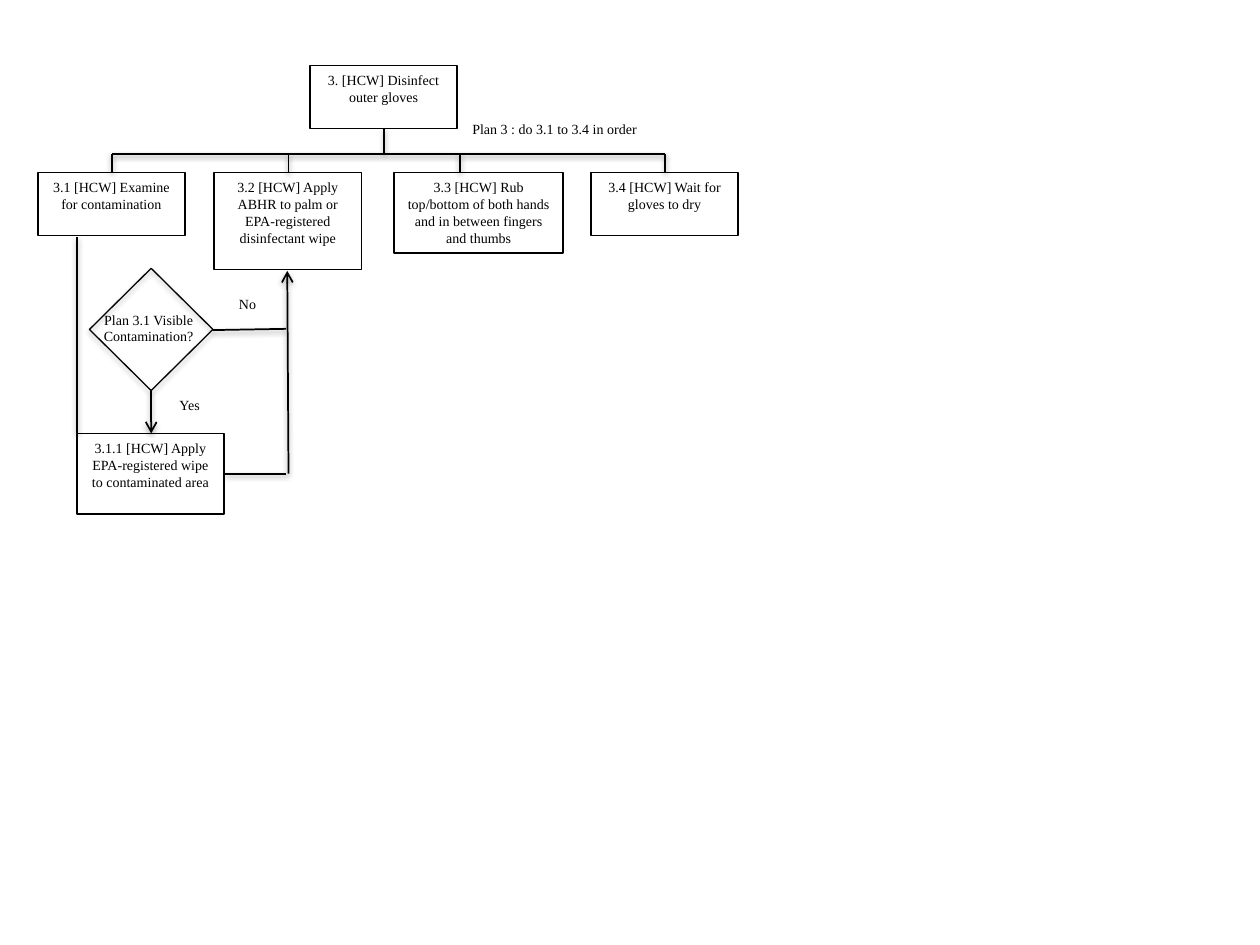
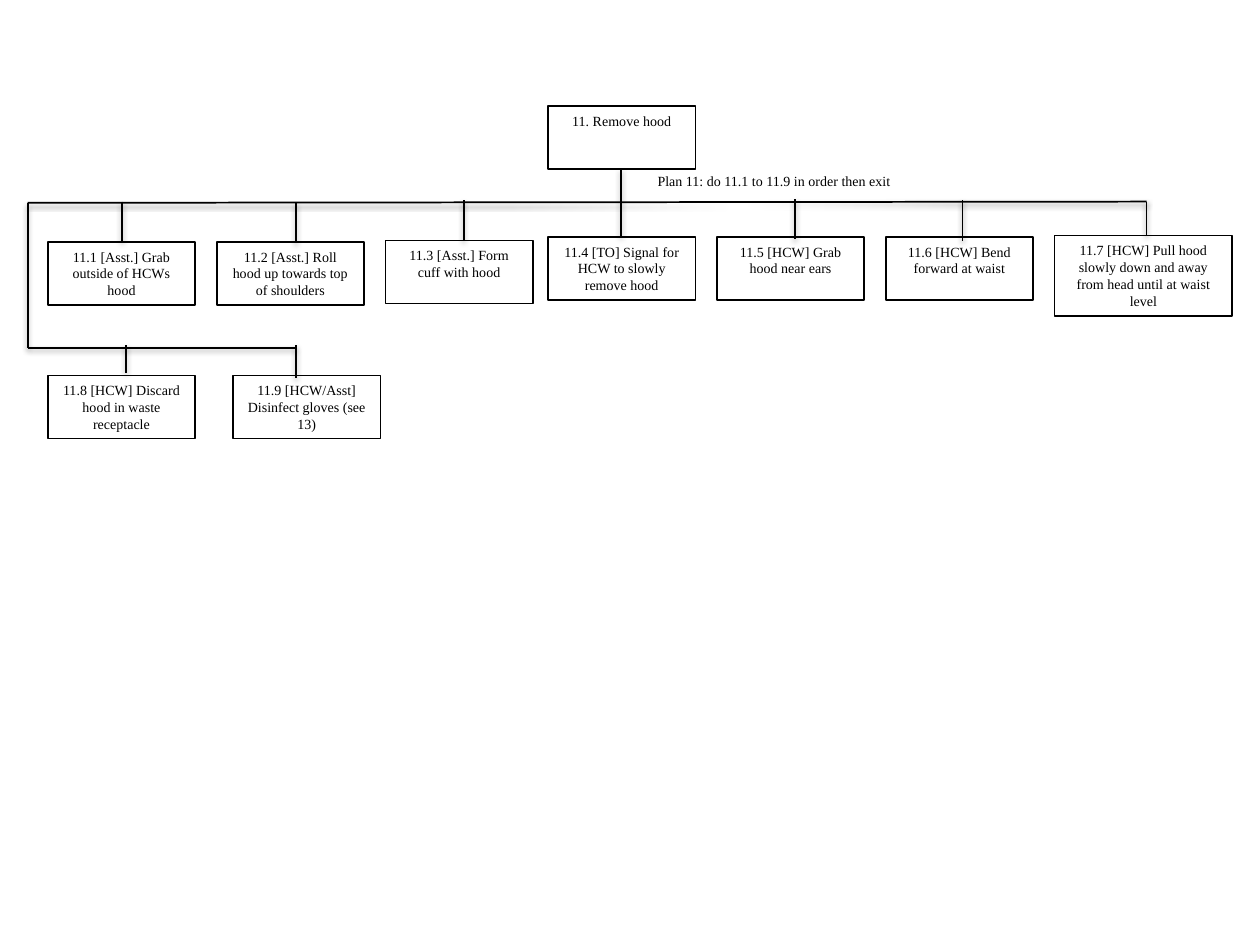
"""Build two task-analysis charts: disinfecting outer gloves and removing a hood."""
from dataclasses import dataclass
from lxml.etree import SubElement
from pptx import Presentation
from pptx.dml.color import RGBColor
from pptx.enum.shapes import MSO_CONNECTOR as Connector, MSO_SHAPE as Shape
from pptx.enum.text import MSO_ANCHOR as Anchor, PP_ALIGN as Align
from pptx.oxml.ns import qn
from pptx.util import Inches, Pt


@dataclass(frozen=True)
class Theme:
    font: str = "Times New Roman"
    text_size: float = 8
    ink: RGBColor = RGBColor(0, 0, 0)
    paper: RGBColor = RGBColor(255, 255, 255)
    line_width: float = 1
    diamond_width: float = 0.75
    shadow_blur: float = 3.1
    line_shadow: tuple = (1.6, 38)
    diamond_shadow: tuple = (1.8, 35)


THEME = Theme()
SLIDE_WIDTH, SLIDE_HEIGHT = 10, 7.5
BOX_WIDTH, BOX_HEIGHT, TALL_HEIGHT = 1.17, 0.5, 0.64
LABEL_HEIGHT, PLAN_WIDTH = 0.24, 2.52

GLOVES_ROW, GLOVES_RAIL = 1.37, 1.22
HOOD_PITCH, HOOD_RAIL, HOOD_LOWER_RAIL = 1.34, 1.6, 2.76
HOOD_LEFT, HOOD_MIDDLE, HOOD_MARGIN = 0.38, 4.35, 0.22

GLOVES = {
    "boxes": [
        ("3. [HCW] Disinfect outer gloves", 2.46, 0.52),
        ("3.1 [HCW] Examine for contamination", 0.3, GLOVES_ROW),
        ("3.2 [HCW] Apply ABHR to palm or EPA-registered disinfectant wipe",
         1.7, GLOVES_ROW, BOX_WIDTH, 0.77),
        ("3.3 [HCW] Rub top/bottom of both hands and in between fingers and thumbs",
         3.13, GLOVES_ROW, 1.34, TALL_HEIGHT),
        ("3.4 [HCW] Wait for gloves to dry", 4.69, GLOVES_ROW),
    ],
    "lines": [
        ((0.89, GLOVES_RAIL), (5.28, GLOVES_RAIL)),
        ((3.05, 1.02), (3.05, GLOVES_RAIL)),
        *[((x, GLOVES_RAIL), (x, GLOVES_ROW)) for x in (0.89, 2.29, 3.65, 5.28)],
        ((0.61, 1.88), (0.61, 3.44)),
    ],
    "plan": ("Plan 3 : do 3.1 to 3.4 in order", 3.65, 0.91),
}

DECISION = {
    "diamond": (0.71, 2.13, 0.98, 0.97),
    "boxes": [("3.1.1 [HCW] Apply EPA-registered wipe to contaminated area",
               0.61, 3.44, BOX_WIDTH, TALL_HEIGHT)],
    "labels": [
        ("Plan 3.1 Visible Contamination?", 0.69, 2.42, 0.98, 0.37),
        ("Yes", 1.32, 3.1, 0.37, 0.37),
        ("No", 1.78, 2.3, 0.37, LABEL_HEIGHT),
    ],
    "lines": [
        ((1.78, 3.76), (2.27, 3.76)),
        ((1.69, 2.62), (2.27, 2.61)),
    ],
    "arrows": [
        ((1.2, 3.1), (1.2, 3.44)),
        ((2.29, 3.76), (2.28, 2.15)),
    ],
}

HOOD_STEPS = [
    ("11.1 [Asst.] Grab outside of HCWs hood", HOOD_LEFT, 0, 1.92),
    ("11.2 [Asst.] Roll hood up towards top of shoulders", HOOD_LEFT, 1, 1.92),
    ("11.3 [Asst.] Form cuff with hood", HOOD_LEFT, 2, 1.91),
    ("11.4 [TO] Signal for HCW to slowly remove hood", HOOD_MIDDLE, 0, 1.88),
    ("11.5 [HCW] Grab hood near ears", HOOD_MIDDLE, 1, 1.88),
    ("11.6 [HCW] Bend forward at waist", HOOD_MIDDLE, 2, 1.88),
]
HOOD_STEMS = [
    (0.97, 1.6, 1.92), (2.35, 1.61, 1.93), (3.68, 1.59, 1.91), (4.93, 1.34, 1.88),
    (6.31, 1.58, 1.9), (7.64, 1.59, 1.91), (9.1, HOOD_RAIL, 1.87),
    (1, 2.74, 2.96), (2.35, 2.74, 3),
]
HOOD = {
    "boxes": [
        ("11. Remove hood", HOOD_MIDDLE, 0.84),
        *[(text, start + column * HOOD_PITCH, top)
          for text, start, column, top in HOOD_STEPS],
        ("11.7 [HCW] Pull hood slowly down and away from head until at waist level",
         HOOD_MIDDLE + 3 * HOOD_PITCH, 1.87, 1.41, TALL_HEIGHT),
        ("11.8 [HCW] Discard hood in waste receptacle", HOOD_LEFT, 2.98),
        ("11.9 [HCW/Asst] Disinfect gloves (see 13)", 1.85, 2.98),
    ],
    "lines": [
        ((9.1, HOOD_RAIL), (HOOD_MARGIN, 1.61)),
        ((HOOD_MARGIN, 1.61), (HOOD_MARGIN, HOOD_LOWER_RAIL)),
        ((2.35, HOOD_LOWER_RAIL), (HOOD_MARGIN, HOOD_LOWER_RAIL)),
        *[((x, top), (x, bottom)) for x, top, bottom in HOOD_STEMS],
    ],
    "plan": ("Plan 11: do 11.1 to 11.9 in order then exit", 5.12, 1.32),
}


def inches(*lengths):
    return [Inches(length) for length in lengths]


def set_line(shape, width):
    shape.line.color.rgb = THEME.ink
    shape.line.width = Pt(width)


def add_shadow(shape, distance, opacity):
    properties = shape.element.spPr
    for old in properties.findall(qn("a:effectLst")):
        properties.remove(old)
    effects = SubElement(properties, qn("a:effectLst"))
    shadow = SubElement(effects, qn("a:outerShdw"), blurRad=str(Pt(THEME.shadow_blur)),
                        dist=str(Pt(distance)), dir="5400000", rotWithShape="0")
    color = SubElement(shadow, qn("a:srgbClr"), val=str(THEME.ink))
    SubElement(color, qn("a:alpha"), val=str(opacity * 1000))


def write(shape, text, align):
    frame = shape.text_frame
    frame.word_wrap = True
    frame.vertical_anchor = Anchor.TOP
    paragraph = frame.paragraphs[0]
    paragraph.text = text
    paragraph.alignment = align
    paragraph.font.name = THEME.font
    paragraph.font.size = Pt(THEME.text_size)
    paragraph.font.color.rgb = THEME.ink


def add_box(shapes, text, left, top, width=BOX_WIDTH, height=BOX_HEIGHT):
    box = shapes.add_shape(Shape.RECTANGLE, *inches(left, top, width, height))
    box.shadow.inherit = False
    box.fill.solid()
    box.fill.fore_color.rgb = THEME.paper
    set_line(box, THEME.line_width)
    write(box, text, Align.CENTER)


def add_label(shapes, text, left, top, width=PLAN_WIDTH, height=LABEL_HEIGHT,
              align=Align.LEFT):
    write(shapes.add_textbox(*inches(left, top, width, height)), text, align)


def add_line(shapes, start, end, arrow=False):
    line = shapes.add_connector(Connector.STRAIGHT, *inches(*start, *end))
    set_line(line, THEME.line_width)
    if arrow:
        SubElement(line.line._get_or_add_ln(), qn("a:tailEnd"), type="arrow")
    add_shadow(line, *THEME.line_shadow)


def add_decision(shapes, decision):
    diamond = shapes.add_shape(Shape.DIAMOND, *inches(*decision["diamond"]))
    diamond.fill.background()
    set_line(diamond, THEME.diamond_width)
    add_shadow(diamond, *THEME.diamond_shadow)
    for box in decision["boxes"]:
        add_box(shapes, *box)
    for label in decision["labels"]:
        add_label(shapes, *label, align=Align.CENTER)
    for line in decision["lines"]:
        add_line(shapes, *line)
    for arrow in decision["arrows"]:
        add_line(shapes, *arrow, arrow=True)


def add_chart_slide(presentation, chart, decision=None):
    slide = presentation.slides.add_slide(presentation.slide_layouts[6])
    if decision:
        add_decision(slide.shapes.add_group_shape().shapes, decision)
    for box in chart["boxes"]:
        add_box(slide.shapes, *box)
    for line in chart["lines"]:
        add_line(slide.shapes, *line)
    add_label(slide.shapes, *chart["plan"])


def main():
    presentation = Presentation()
    presentation.slide_width, presentation.slide_height = inches(SLIDE_WIDTH, SLIDE_HEIGHT)
    add_chart_slide(presentation, GLOVES, DECISION)
    add_chart_slide(presentation, HOOD)
    presentation.save("out.pptx")


if __name__ == "__main__":
    main()
